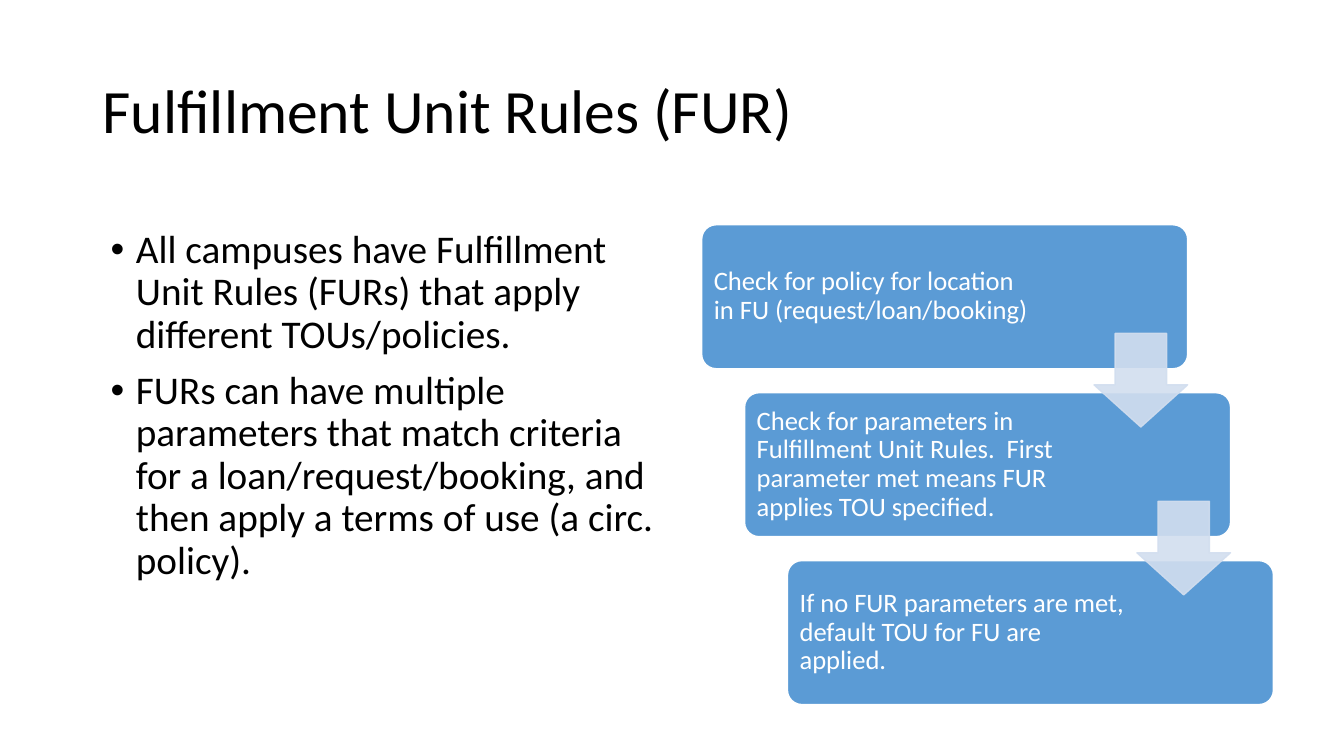
from lxml import etree
from pptx import Presentation
from pptx.dml.color import RGBColor
from pptx.enum.shapes import MSO_SHAPE
from pptx.enum.text import MSO_ANCHOR, PP_ALIGN
from pptx.oxml.ns import qn
from pptx.util import Inches, Pt

ROUNDED = MSO_SHAPE.ROUNDED_RECTANGLE
DOWN_ARROW = MSO_SHAPE.DOWN_ARROW
TOP, MIDDLE = MSO_ANCHOR.TOP, MSO_ANCHOR.MIDDLE
LEFT = PP_ALIGN.LEFT

FONT = "Calibri"
BLACK, WHITE, BLUE, PALE = "000000", "FFFFFF", "5B9BD5", "D2DEEF"

RULES = [
    "All campuses have Fulfillment Unit Rules (FURs) that apply different TOUs/policies.",
    "FURs can have multiple parameters that match criteria for a loan/request/booking, "
    "and then apply a terms of use (a circ. policy).",
]
# Wording of each step and the width of its text
STEPS = [
    ("Check for policy for location in FU (request/loan/booking)", 3.28),
    ("Check for parameters in Fulfillment Unit Rules.  First parameter met "
     "means FUR applies TOU specified.", 3.38),
    ("If no FUR parameters are met, default TOU for FU are applied.", 3.38),
]


def color(value):
    return RGBColor.from_string(value)


def add_text(slide, box, paragraphs, size, ink, anchor, inset=(0.1, 0.05), bullet=False):
    frame = slide.shapes.add_textbox(*map(Inches, box)).text_frame
    frame.word_wrap = True
    frame.vertical_anchor = anchor
    frame.margin_left = frame.margin_right = Inches(inset[0])
    frame.margin_top = frame.margin_bottom = Inches(inset[1])
    for i, wording in enumerate(paragraphs):
        paragraph = frame.paragraphs[0] if i == 0 else frame.add_paragraph()
        paragraph.alignment = LEFT
        paragraph.line_spacing = 0.9
        run = paragraph.add_run()
        run.text = wording
        run.font.name = FONT
        run.font.size = Pt(size)
        run.font.color.rgb = color(ink)
        if bullet:
            paragraph.space_before = Pt(10)
            properties = paragraph._p.get_or_add_pPr()
            properties.set("marL", str(Inches(0.25)))
            properties.set("indent", str(-Inches(0.25)))
            etree.SubElement(properties, qn("a:buFont")).set("typeface", "Arial")
            etree.SubElement(properties, qn("a:buChar")).set("char", "•")


def add_block(slide, kind, box, adjustments, fill, line):
    block = slide.shapes.add_shape(kind, *map(Inches, box))
    block.shadow.inherit = False
    for i, value in enumerate(adjustments):
        block.adjustments[i] = value
    block.fill.solid()
    block.fill.fore_color.rgb = color(fill)
    block.line.color.rgb = color(line)
    block.line.width = Pt(1)
    return block


def add_title(slide, box):
    add_text(slide, box, ["Fulfillment Unit Rules (FUR)"], 44, BLACK, MIDDLE)


def add_rules(slide, box):
    add_text(slide, box, RULES, 28, BLACK, TOP, bullet=True)


def add_staircase(slide, box):
    left, top, width, height = box
    step_w, step_h = width * 0.85, height * 0.3
    shift_x = (width - step_w) / (len(STEPS) - 1)
    shift_y = (height - step_h) / (len(STEPS) - 1)
    arrow_size = step_h * 0.65
    pad = 0.04

    # Steps
    for i, (wording, text_w) in enumerate(STEPS):
        x, y = left + i * shift_x, top + i * shift_y
        add_block(slide, ROUNDED, (x, y, step_w, step_h), [0.1], BLUE, WHITE)
        add_text(slide, (x + pad, y + pad, text_w, step_h - 2 * pad),
                 [wording], 19, WHITE, MIDDLE, inset=(0.08, 0.08))

    # Translucent arrows bridging each step and the next
    for i in range(len(STEPS) - 1):
        x = left + i * shift_x + step_w - arrow_size
        y = top + i * shift_y + step_h * 0.755
        arrow = add_block(slide, DOWN_ARROW, (x, y, arrow_size, arrow_size),
                          [0.55, 0.45], PALE, PALE)
        for tint in arrow._element.spPr.iter(qn("a:srgbClr")):
            etree.SubElement(tint, qn("a:alpha")).set("val", "90000")


def main():
    deck = Presentation()
    deck.slide_width, deck.slide_height = Inches(13.33), Inches(7.5)
    slide = deck.slides.add_slide(deck.slide_layouts[6])
    add_title(slide, (0.92, 0.4, 11.5, 1.45))
    add_rules(slide, (1, 2.23, 5.67, 4.76))
    add_staircase(slide, (6.96, 2.23, 5.67, 4.76))
    deck.save("out.pptx")


if __name__ == "__main__":
    main()
